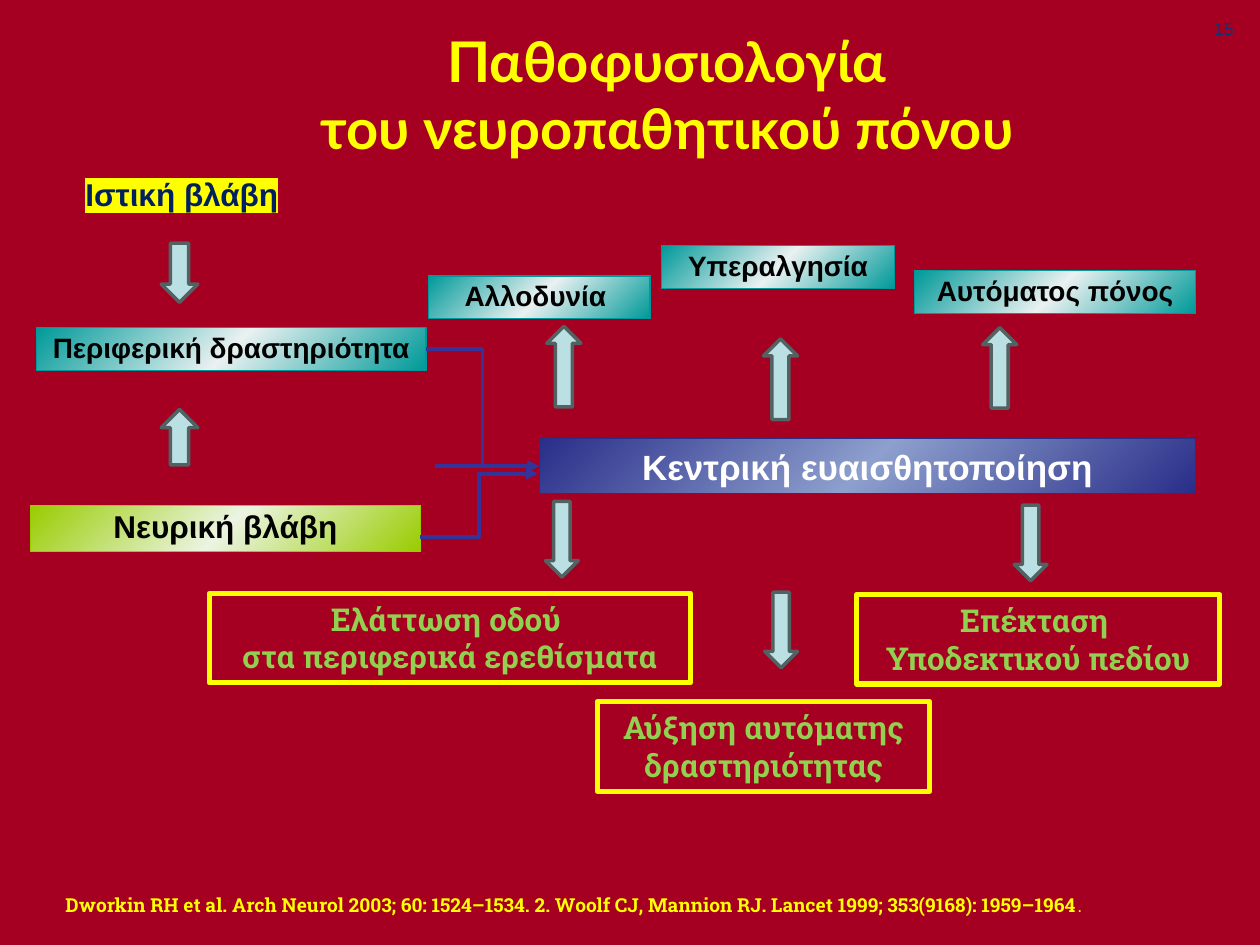
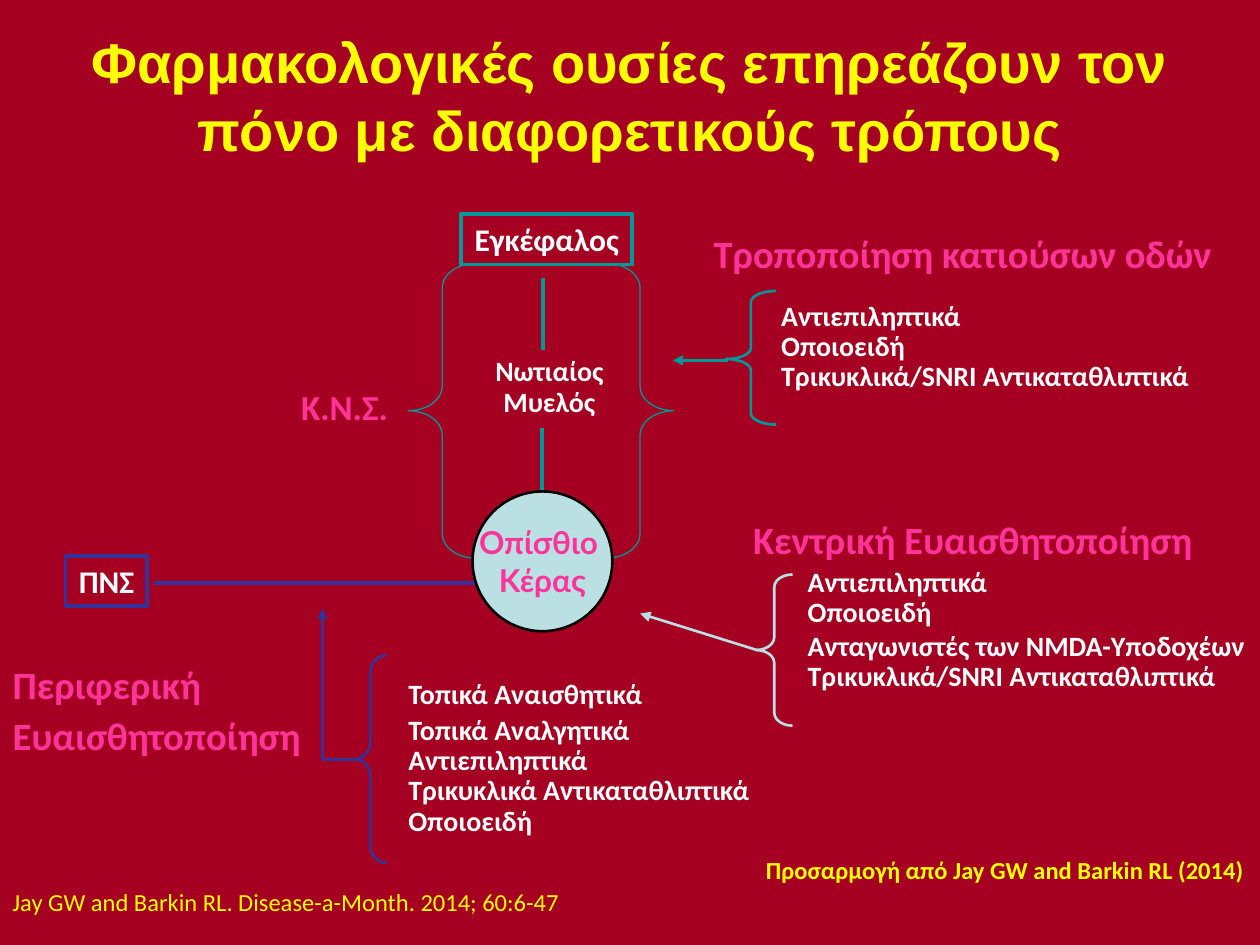
import pptx
import pptx.util
import pptx.oxml
import pptx.oxml.ns
import pptx.dml.color
import pptx.enum.shapes
import pptx.enum.text

RGB = pptx.dml.color.RGBColor
KIND = pptx.enum.shapes.MSO_SHAPE
LINK = pptx.enum.shapes.MSO_CONNECTOR
ALIGN = pptx.enum.text.PP_ALIGN
ANCHOR = pptx.enum.text.MSO_ANCHOR
Pt = pptx.util.Pt
qn = pptx.oxml.ns.qn

SCALE = 9144  # EMU in one px, 100 px to the inch

RED = RGB(0xA5, 0x00, 0x21)
YELLOW = RGB(0xFF, 0xFF, 0x00)
WHITE = RGB(0xFF, 0xFF, 0xFF)
BLACK = RGB(0x00, 0x00, 0x00)
NAVY = RGB(0x00, 0x20, 0x60)
STEEL = RGB(0x00, 0x3B, 0x79)
TEAL = RGB(0x00, 0x99, 0x99)
MIST = RGB(0xEA, 0xF1, 0xF1)
INDIGO = RGB(0x29, 0x2E, 0x89)
SKY = RGB(0x8D, 0x9F, 0xCD)
LIME = RGB(0x99, 0xCC, 0x00)
CREAM = RGB(0xEB, 0xF4, 0xE2)
BLUE = RGB(0x33, 0x33, 0x99)
ICE = RGB(0xBB, 0xE0, 0xE3)
SLATE = RGB(0x52, 0x62, 0x63)
GREEN = RGB(0x92, 0xD0, 0x50)
PINK = RGB(0xFF, 0x33, 0x99)

THIN, MID, BOLD = 0.75, 1.5, 2.25


def px(*sizes):
    return [size * SCALE for size in sizes]


def node(tag, inner="", **attrs):
    """Make one DrawingML element."""
    pairs = "".join(f' {key}="{value}"' for key, value in attrs.items())
    space = pptx.oxml.ns.nsdecls("a")
    return pptx.oxml.parse_xml(f"<a:{tag} {space}{pairs}>{inner}</a:{tag}>")


class Deck:
    def __init__(self):
        self.show = pptx.Presentation()
        self.show.slide_width, self.show.slide_height = px(1000, 750)
        fill = self.show.slide_master.background.fill
        fill.solid()
        fill.fore_color.rgb = RED
        self.slide = None

    def page(self, layout):
        self.slide = self.show.slides.add_slide(self.show.slide_layouts[layout])

    def style(self, run, size, font, color, bold=True):
        run.font.size = Pt(size)
        run.font.name = font
        run.font.color.rgb = color
        run.font.bold = bold

    def text(self, shape, lines, size, font, color, bold=True, align=ALIGN.LEFT,
             anchor=ANCHOR.TOP, inset=(10, 5, 10, 5), wrap=True, lead=1, gaps=()):
        """Fill a shape with paragraphs; lead is one spacing or one for each line."""
        frame = shape.text_frame
        frame.text = lines
        frame.auto_size = pptx.enum.text.MSO_AUTO_SIZE.NONE
        frame.word_wrap = wrap
        frame.vertical_anchor = anchor
        (frame.margin_left, frame.margin_top,
         frame.margin_right, frame.margin_bottom) = px(*inset)
        for i, para in enumerate(frame.paragraphs):
            para.alignment = align
            para.line_spacing = lead[i] if isinstance(lead, tuple) else lead
            para.space_before = Pt(gaps[i] if gaps else 0)
            for run in para.runs:
                self.style(run, size, font, color, bold)
        return shape

    def place(self, shape, area):
        shape.left, shape.top, shape.width, shape.height = px(*area)
        return shape

    def title(self, area, text, font, **look):
        shape = self.place(self.slide.shapes.title, area)
        self.text(shape, text, 32, font, YELLOW, align=ALIGN.CENTER, **look)

    def items(self, slot, area, lines, size, color, **look):
        """Put plain lines into a body placeholder."""
        shape = self.place(self.slide.placeholders[slot], area)
        self.text(shape, lines, size, "Calibri", color, **look)
        for para in shape.text_frame.paragraphs:
            props = para._p.get_or_add_pPr()
            props.set("marL", "0")
            props.set("indent", "0")
            props.append(node("buNone"))

    def label(self, area, text, size, font, color, **look):
        box = self.slide.shapes.add_textbox(*px(*area))
        return self.text(box, text, size, font, color, **look)

    def shape(self, kind, area, line, width, fill=None, adjust=()):
        shape = self.slide.shapes.add_shape(kind, *px(*area))
        shape.shadow.inherit = False
        shape.line.color.rgb = line
        shape.line.width = Pt(width)
        if fill is None:
            shape.fill.background()
        else:
            shape.fill.solid()
            shape.fill.fore_color.rgb = fill
        for i, value in enumerate(adjust):
            shape.adjustments[i] = value
        return shape

    def bar(self, area, text, size, edge, glow, color=BLACK, lead=0.9):
        """Draw a rectangle with a diagonal sheen."""
        shape = self.shape(KIND.RECTANGLE, area, edge, THIN)
        stops = "".join(
            f'<a:gs pos="{pos}"><a:srgbClr val="{tone}"/></a:gs>'
            for pos, tone in ((0, edge), (50000, glow), (100000, edge)))
        sheen = node("gradFill", f'<a:gsLst>{stops}</a:gsLst>'
                     '<a:lin ang="2700000" scaled="1"/>', rotWithShape=1)
        props = shape._element.spPr
        props.replace(props.find(qn("a:noFill")), sheen)
        return self.text(shape, text, size, "Arial", color, align=ALIGN.CENTER,
                         anchor=ANCHOR.MIDDLE, lead=lead)

    def frame(self, area, text, line, width, font, color, fill=None):
        shape = self.shape(KIND.RECTANGLE, area, line, width, fill)
        self.text(shape, text, 18, font, color, align=ALIGN.CENTER, wrap=False)

    def line(self, ends, color, width, arrow=True, kind=LINK.STRAIGHT):
        link = self.slide.shapes.add_connector(kind, *px(*ends))
        link.line.color.rgb = color
        link.line.width = Pt(width)
        props = link._element.spPr
        if arrow:
            props.find(qn("a:ln")).append(node("tailEnd", type="triangle"))
        props.append(node("effectLst"))
        return link


def paths(deck):
    """Slide on the pathophysiology of pain."""
    deck.page(5)
    deck.title((59, 21, 941, 150), "Παθοφυσιολογία\vτου νευροπαθητικού πόνου",
               "Lato", inset=(0, 0, 0, 0))

    damage = deck.label((58, 134, 175, 40), "Iστική βλάβη", 18, "Arial", NAVY,
                        wrap=False)
    run = damage.text_frame.paragraphs[0].runs[0]
    mark = node("highlight", f'<a:srgbClr val="{YELLOW}"/>')
    run._r.rPr.find(qn("a:solidFill")).addnext(mark)

    outer = deck.bar((29, 260, 309, 34), "Περιφερική δραστηριότητα", 16, TEAL, MIST)
    core = deck.bar((428, 348, 521, 44), "Κεντρική ευαισθητοποίηση", 20,
                    INDIGO, SKY, WHITE, 1)
    deck.bar((24, 401, 310, 37), "Νευρική βλάβη", 18, LIME, CREAM)
    for area, text in (((525, 195, 185, 34), "Υπεραλγησία"),
                       ((340, 219, 176, 34), "Αλλοδυνία "),
                       ((726, 215, 223, 34), "Αυτόματος πόνος")):
        deck.bar(area, text, 16, TEAL, MIST)

    link = deck.line((338, 277, 428, 370), BLUE, BOLD, kind=LINK.ELBOW)
    link.begin_connect(outer, 3)
    link.end_connect(core, 1)
    deck.line((345, 370, 428, 370), BLUE, BOLD).end_connect(core, 1)
    deck.line((333, 426, 427, 376), BLUE, BOLD, kind=LINK.ELBOW)

    for area, text in (
            ((166, 471, 382, 71), "Ελάττωση οδού \nστα περιφερικά ερεθίσματα"),
            ((474, 557, 264, 71), "Αύξηση αυτόματης\nδραστηριότητας"),
            ((680, 472, 288, 71), "Επέκταση \nΥποδεκτικού πεδίου")):
        deck.frame(area, text, YELLOW, 3, "Roboto Slab", GREEN)

    up, down = KIND.UP_ARROW, KIND.DOWN_ARROW
    for kind, *area in ((down, 128, 193, 29, 47), (up, 128, 325, 29, 44),
                        (up, 434, 259, 27, 64), (up, 780, 260, 27, 64),
                        (up, 606, 269, 27, 64), (down, 433, 398, 26, 60),
                        (down, 805, 401, 26, 60), (down, 607, 470, 26, 60)):
        deck.shape(kind, area, SLATE, 2, ICE)

    source = deck.label(
        (40, 710, 940, 22),
        "Dworkin RH et al. Arch Neurol 2003; 60: 1524–1534. "
        "2. Woolf CJ, Mannion RJ. Lancet 1999; 353(9168): 1959–1964",
        11, "Roboto Slab", YELLOW, anchor=ANCHOR.BOTTOM, inset=(12, 0, 0, 4),
        lead=0.95)
    stop = source.text_frame.paragraphs[0].add_run()
    stop.text = "."
    deck.style(stop, 10, "Arial", YELLOW, False)
    deck.label((962, 14, 17, 17), "15", 10, "Arial", STEEL, bold=False,
               align=ALIGN.RIGHT, anchor=ANCHOR.MIDDLE, inset=(0, 0, 0, 0),
               wrap=False)


def drugs(deck):
    """Slide on where each group of drugs acts."""
    deck.page(4)
    deck.title((50, 13, 900, 125),
               "Φαρμακολογικές ουσίες επηρεάζουν τον πόνο με διαφορετικούς τρόπους",
               "Arial", anchor=ANCHOR.MIDDLE)

    left, right = KIND.LEFT_BRACE, KIND.RIGHT_BRACE
    for kind, area, color, width, adjust in (
            (right, (481, 209, 54, 234), TEAL, THIN, (0.36, 0.5)),
            (left, (324, 209, 54, 234), TEAL, THIN, (0.36, 0.5)),
            (left, (281, 520, 26, 165), BLUE, MID, (0.52, 0.5)),
            (left, (600, 456, 29, 120), ICE, MID, (0.35, 0.5)),
            (left, (576, 231, 40, 106), TEAL, MID, (0.22, 0.51))):
        deck.shape(kind, area, color, width, adjust=adjust)

    for ends, color in (((431, 221, 431, 278), TEAL), ((430, 340, 430, 402), TEAL),
                        ((122, 463, 378, 463), BLUE)):
        deck.line(ends, color, BOLD, arrow=False)
    deck.line((601, 516, 508, 487), ICE, MID)
    deck.line((578, 286, 534, 286), TEAL, MID)
    bend = deck.line((256, 483, 284, 603), BLUE, MID, kind=LINK.ELBOW)
    props = bend._element.spPr
    props.find(qn("a:prstGeom")).set("prst", "bentConnector2")
    props.find(qn("a:xfrm")).set("rot", "10800000")

    for area, text, color in (((366, 170, 136, 40), "Εγκέφαλος", TEAL),
                              ((52, 441, 65, 40), "ΠΝΣ", BLUE)):
        deck.frame(area, text, color, BOLD, "Calibri", WHITE, RED)
    horn = deck.shape(KIND.OVAL, (375, 390, 111, 111), BLACK, MID, ICE)
    deck.text(horn, "Οπίσθιο \nΚέρας", 18, "Lato", PINK, align=ALIGN.CENTER,
              anchor=ANCHOR.MIDDLE, inset=(0, 0, 0, 0), wrap=False)

    for area, text in (((547, 178, 434, 47), "Τροποποίηση κατιούσων οδών"),
                       ((571, 405, 402, 47), "Κεντρική Ευαισθητοποίηση")):
        deck.label(area, text, 22, "Calibri", PINK, align=ALIGN.CENTER)
    tight = (9, 4, 9, 4)
    deck.label((230, 302, 88, 43), "Κ.Ν.Σ.", 20, "Calibri", PINK, inset=tight,
               wrap=False)
    deck.label((380, 280, 112, 57), "Νωτιαίος Μυελός", 16, "Calibri", WHITE,
               align=ALIGN.CENTER, inset=tight, lead=0.9)

    deck.items(1, (0, 520, 256, 88), "Περιφερική\nΕυαισθητοποίηση", 22, PINK,
               gaps=(0, 2.2))
    deck.items(2, (314, 532, 304, 188),
               "Τοπικά Αναισθητικά\nΤοπικά Αναλγητικά\nΑντιεπιληπτικά\n"
               "Τρικυκλικά Αντικαταθλιπτικά\nΟποιοειδή", 16, WHITE,
               lead=(1, 1, 0.9, 0.9, 0.9), gaps=(0, 1.6, 0, 0, 0))
    deck.items(3, (632, 447, 368, 109),
               "Αντιεπιληπτικά\nΟποιοειδή\nΑνταγωνιστές των NMDA-Υποδοχέων\n"
               "Τρικυκλικά/SNRI Αντικαταθλιπτικά", 16, WHITE, inset=tight,
               lead=(0.9, 0.9, 1, 0.9))
    deck.items(4, (611, 236, 364, 82),
               "Αντιεπιληπτικά\nΟποιοειδή\nΤρικυκλικά/SNRI Αντικαταθλιπτικά",
               16, WHITE, inset=tight, lead=0.9)

    deck.label((0, 699, 458, 34),
               "Jay GW and Barkin RL. Disease-a-Month. 2014; 60:6-47",
               14, "Calibri", YELLOW, bold=False, wrap=False)
    deck.label((598, 674, 402, 34), "Προσαρμογή από Jay GW and Barkin RL (2014)",
               14, "Calibri", YELLOW, wrap=False)


def main():
    deck = Deck()
    paths(deck)
    drugs(deck)
    deck.show.save("out.pptx")


if __name__ == "__main__":
    main()
